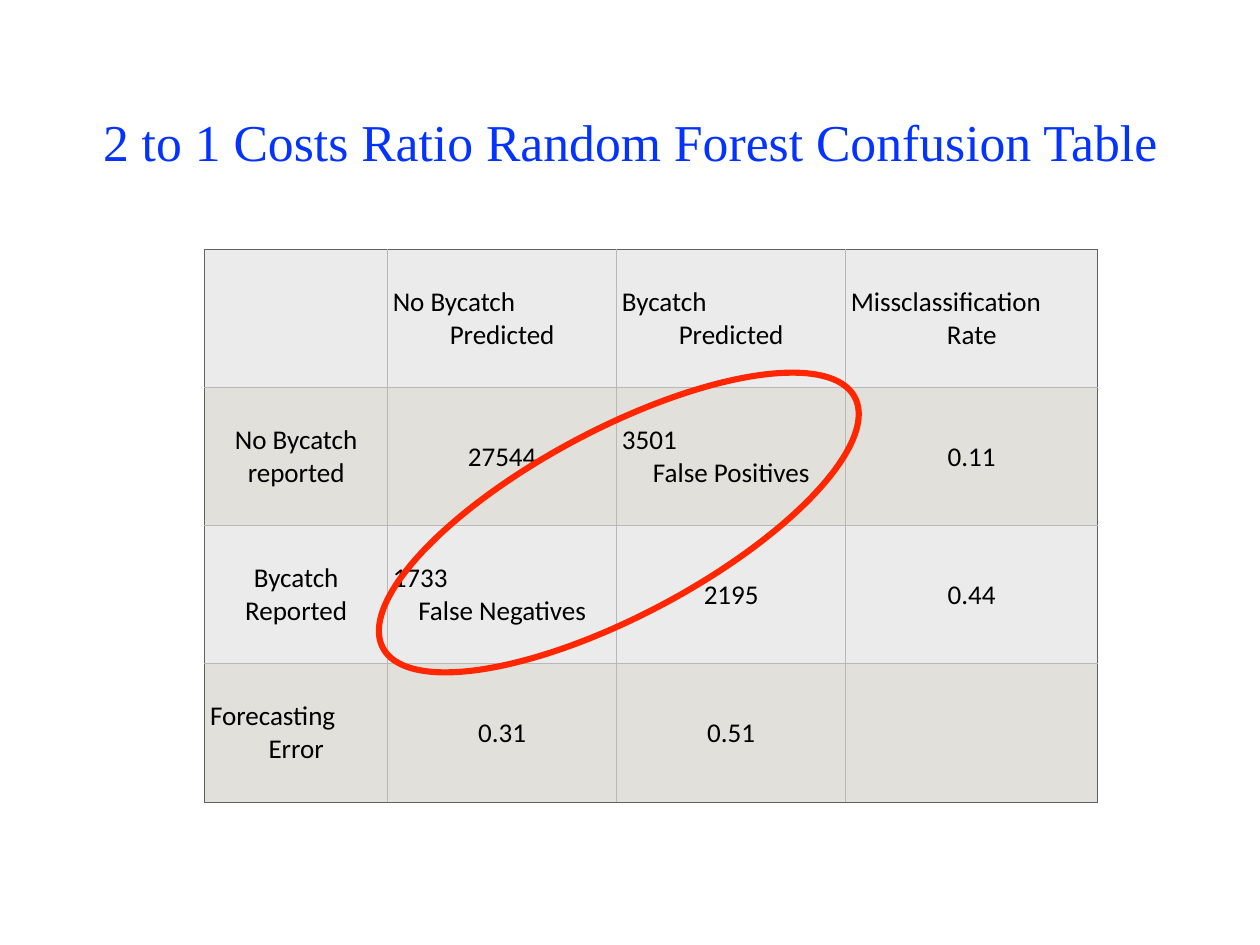
from lxml import etree
from pptx import Presentation
from pptx.dml.color import RGBColor
from pptx.enum.shapes import MSO_SHAPE
from pptx.enum.text import MSO_ANCHOR, PP_ALIGN
from pptx.oxml.ns import qn
from pptx.util import Cm, Pt

LEFT, CENTER = PP_ALIGN.LEFT, PP_ALIGN.CENTER
MIDDLE = MSO_ANCHOR.MIDDLE
OVAL = MSO_SHAPE.OVAL

COLORS = {
    "title": "0433FF",
    "text": "000000",
    "light_row": "EBEBEB",
    "dark_row": "E1E0DA",
    "inner_border": "B8B8B8",
    "outer_border": "606060",
    "highlight": "FF2600",
}
INSET = Cm(0.15)
COLUMN_WIDTHS = (5.24, 6.57, 6.56, 7.23)
CONFUSION_ROWS = (
    ("", "No Bycatch\nPredicted", "Bycatch\nPredicted", "Missclassification\nRate"),
    ("No Bycatch reported", "27544", "3501\nFalse Positives", "0.11"),
    ("Bycatch Reported", "1733\nFalse Negatives", "2195", "0.44"),
    ("Forecasting\nError", "0.31", "0.51", ""),
)


def rgb(name):
    return RGBColor.from_string(COLORS[name])


def write_text(frame, text, *, size, font, color):
    """Centre the last line; any line before it starts at the left."""
    lines = text.split("\n")
    for number, line in enumerate(lines):
        paragraph = frame.add_paragraph() if number else frame.paragraphs[0]
        paragraph.alignment = CENTER if number == len(lines) - 1 else LEFT
        run = paragraph.add_run()
        run.text = line
        run.font.size = Pt(size)
        run.font.name = font
        run.font.color.rgb = rgb(color)


def set_insets(holder):
    holder.margin_left = holder.margin_right = INSET
    holder.margin_top = holder.margin_bottom = INSET
    holder.vertical_anchor = MIDDLE


def set_borders(cell, outer_sides):
    properties = cell._tc.get_or_add_tcPr()
    for side in "LRTB":
        border = etree.SubElement(properties, qn(f"a:ln{side}"), w=str(Pt(1)))
        fill = etree.SubElement(border, qn("a:solidFill"))
        color = "outer_border" if side in outer_sides else "inner_border"
        etree.SubElement(fill, qn("a:srgbClr"), val=COLORS[color])


def add_title(slide, left, top, width, height):
    title = slide.shapes.title
    title.left, title.top, title.width, title.height = map(Cm, (left, top, width, height))
    frame = title.text_frame
    frame.word_wrap = False
    set_insets(frame)
    write_text(frame, "2 to 1 Costs Ratio Random Forest Confusion Table",
               size=42, font="Times New Roman", color="title")


def add_confusion_table(slide, left, top, width, height):
    last_row, last_column = len(CONFUSION_ROWS) - 1, len(COLUMN_WIDTHS) - 1
    table = slide.shapes.add_table(last_row + 1, last_column + 1,
                                   Cm(left), Cm(top), Cm(width), Cm(height)).table
    table.first_row = table.horz_banding = False
    for column, column_width in zip(table.columns, COLUMN_WIDTHS):
        column.width = Cm(column_width)

    for r, row in enumerate(CONFUSION_ROWS):
        for c, text in enumerate(row):
            cell = table.cell(r, c)
            edges = {"L": c == 0, "R": c == last_column, "T": r == 0, "B": r == last_row}
            set_borders(cell, [side for side, is_outer in edges.items() if is_outer])
            cell.fill.solid()
            cell.fill.fore_color.rgb = rgb("dark_row" if r % 2 else "light_row")
            set_insets(cell)
            if text:
                write_text(cell.text_frame, text, size=22, font="Calibri", color="text")


def add_error_highlight(slide, left, top, width, height):
    """Ring the false positives and false negatives."""
    ring = slide.shapes.add_shape(OVAL, Cm(left), Cm(top), Cm(width), Cm(height))
    ring.rotation = 332
    ring.shadow.inherit = False
    ring.fill.background()
    ring.line.color.rgb = rgb("highlight")
    ring.line.width = Pt(5)


def main():
    presentation = Presentation()
    presentation.slide_width, presentation.slide_height = Cm(36.12), Cm(27.1)
    title_only = presentation.slide_layouts[5]
    slide = presentation.slides.add_slide(title_only)
    add_confusion_table(slide, 5.87, 7.16, sum(COLUMN_WIDTHS), 15.84)
    add_title(slide, 2.8, 3.1, 30.55, 1.9)
    add_error_highlight(slide, 10.08, 12.32, 15.32, 5.33)
    presentation.save("out.pptx")


if __name__ == "__main__":
    main()
